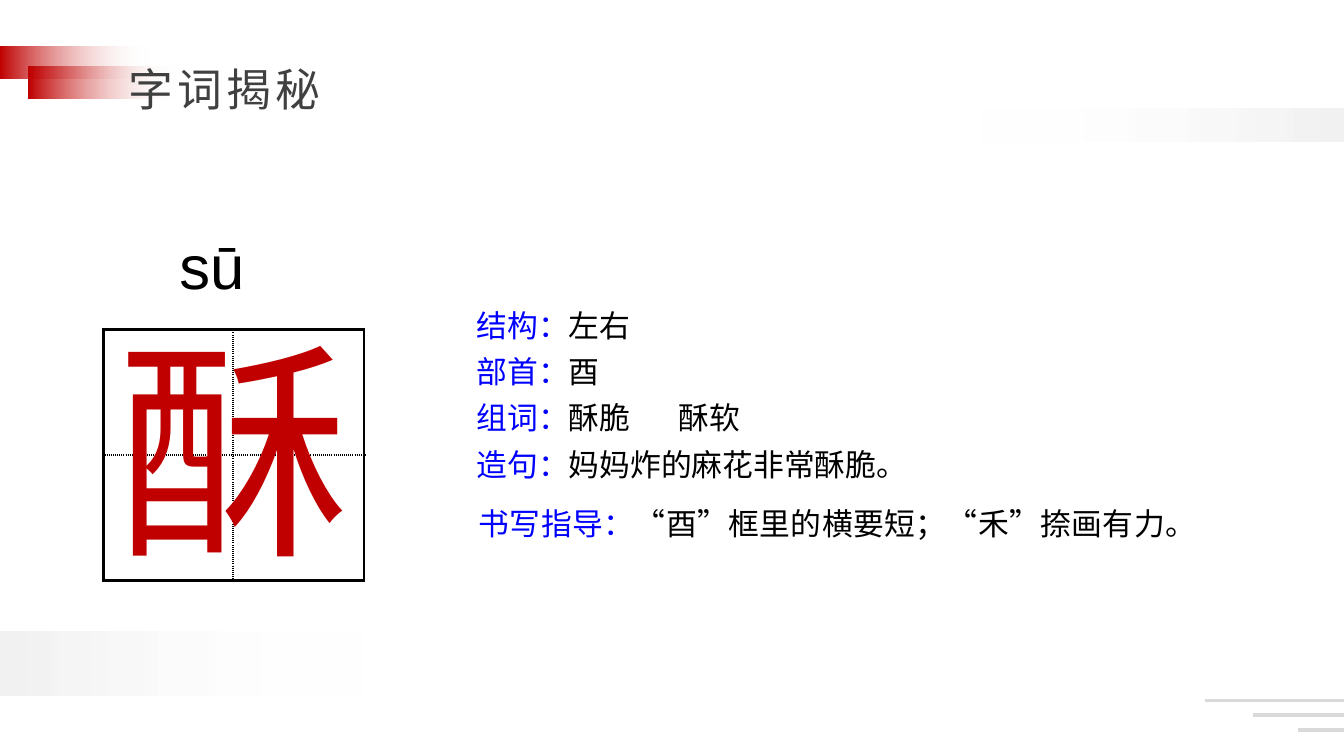
from lxml.etree import SubElement as Sub
from pptx import Presentation
from pptx.dml.color import RGBColor as RGB
from pptx.enum.shapes import MSO_CONNECTOR as Link, MSO_SHAPE as Form
from pptx.enum.text import MSO_ANCHOR as Anchor, PP_ALIGN as Align
from pptx.oxml import parse_xml
from pptx.oxml.ns import nsdecls, qn
from pptx.util import Inches, Pt

WIDE, HIGH = 13.33, 7.5
THEME = {
    "red": "C00000", "pale": "F2F2F2", "white": "FFFFFF", "rule": "D9D9D9",
    "blue": "0000FF", "ink": "000000", "gray": "404040",
    "head": "Karla", "body": "Arial",
    "title": 32, "text": 22, "sound": 44, "glyph": 166,
}
TITLE = "字词揭秘"
SOUND, GLYPH = "sū", "酥"
FACTS = [
    ("结构：", "左右"),
    ("部首：", "酉"),
    ("组词：", "酥脆\t酥软"),
    ("造句：", "妈妈炸的麻花非常酥脆。"),
]
GUIDE = ("书写指导：", "“酉”框里的横要短；“禾”捺画有力。")
BARS = [
    ((0, 0.46, 1.47, 0.32), "red", "white"),
    ((0.28, 0.66, 1.47, 0.32), "red", "white"),
    ((0, 6.27, 3.62, 0.63), "pale", "white"),
    ((WIDE - 3.62, 1.08, 3.62, 0.32), "white", "pale"),
]
RULES = [(11.95, 6.95), (12.43, 7.09), (12.87, 7.24)]
FACT_X, FACT_Y, STEP = 4.63, 2.99, 0.46
GRID = (1.03, 3.27)
COLS, ROWS = (1.28, 1.3), (1.24, 1.25)


def tint(name):
    return RGB.from_string(THEME[name])


def place(box):
    return [Inches(n) for n in box]


def add_bar(shapes, box, start, end):
    bar = shapes.add_shape(Form.RECTANGLE, *place(box))
    bar.shadow.inherit = False
    bar.line.fill.background()
    bar.fill.gradient()
    bar.fill.gradient_angle = 0
    for stop, name in zip(bar.fill.gradient_stops, (start, end)):
        stop.color.rgb = tint(name)
    for node in bar._element.iter(qn("a:srgbClr")):
        if node.get("val") == THEME["white"]:
            Sub(node, qn("a:alpha"), val="0")


def add_rule(shapes, x, y):
    rule = shapes.add_connector(Link.STRAIGHT, *place((x, y, WIDE, y)))
    rule.line.color.rgb = tint("rule")
    rule.line.width = Pt(2.75)
    Sub(rule._element.spPr, qn("a:effectLst"))


def style(run, size, color, face="body"):
    run.font.size = Pt(THEME[size])
    run.font.name = THEME[face]
    run.font.color.rgb = tint(color)


def add_text(shapes, box, parts, size, wrap=True):
    frame = shapes.add_textbox(*place(box)).text_frame
    frame.word_wrap = wrap
    para = frame.paragraphs[0]
    for text, color in parts:
        run = para.add_run()
        run.text = text
        style(run, size, color)
    return para


def add_fact(shapes, box, fact):
    para = add_text(shapes, box, zip(fact, ("blue", "ink")), "text")
    if "\t" in fact[1]:
        tabs = Sub(para._p.get_or_add_pPr(), qn("a:tabLst"))
        Sub(tabs, qn("a:tab"), pos=str(Inches(2)), algn="l")
    return para


def edge(side, outer):
    width, dash = (2.25, "solid") if outer else (1.5, "sysDot")
    return parse_xml(
        f'<a:ln{side} {nsdecls("a")} w="{Pt(width)}"><a:solidFill>'
        f'<a:srgbClr val="{THEME["ink"]}"/></a:solidFill>'
        f'<a:prstDash val="{dash}"/></a:ln{side}>')


def add_grid(shapes):
    box = (*GRID, sum(COLS), sum(ROWS))
    table = shapes.add_table(len(ROWS), len(COLS), *place(box)).table
    table.first_row = table.horz_banding = False
    for col, width in zip(table.columns, COLS):
        col.width = Inches(width)
    for r, high in enumerate(ROWS):
        table.rows[r].height = Inches(high)
        for c in range(len(COLS)):
            cell = table.cell(r, c)
            cell.fill.background()
            outer = {"L": c == 0, "R": c == 1, "T": r == 0, "B": r == 1}
            props = cell._tc.get_or_add_tcPr()
            for i, (side, out) in enumerate(outer.items()):
                props.insert(i, edge(side, out))


def set_title(shapes):
    title = shapes.title
    title.left, title.top, title.width, title.height = place((1.17, 0.3, 2.78, 0.84))
    frame = title.text_frame
    frame.text = TITLE
    frame.vertical_anchor = Anchor.TOP
    para = frame.paragraphs[0]
    para.alignment = Align.LEFT
    para.line_spacing = 1.5
    run = para.runs[0]
    style(run, "title", "gray", "head")
    run._r.get_or_add_rPr().set("spc", "300")
    shapes._spTree.append(title._element)


def main():
    deck = Presentation()
    deck.slide_width, deck.slide_height = place((WIDE, HIGH))
    shapes = deck.slides.add_slide(deck.slide_layouts[5]).shapes
    for bar in BARS:
        add_bar(shapes, *bar)
    for rule in RULES:
        add_rule(shapes, *rule)
    set_title(shapes)
    for i, fact in enumerate(FACTS):
        add_fact(shapes, (FACT_X, FACT_Y + i * STEP, 5.68, 0.47), fact)
    guide = add_fact(shapes, (4.65, 4.96, 7.01, 0.47), GUIDE)
    guide.alignment = Align.JUSTIFY
    add_grid(shapes)
    add_text(shapes, (1.08, 2.99, 2.53, 2.89), [(GLYPH, "red")], "glyph", False)
    add_text(shapes, (1.68, 2.21, 0.88, 0.84), [(SOUND, "ink")], "sound", False)
    deck.save("out.pptx")


if __name__ == "__main__":
    main()
